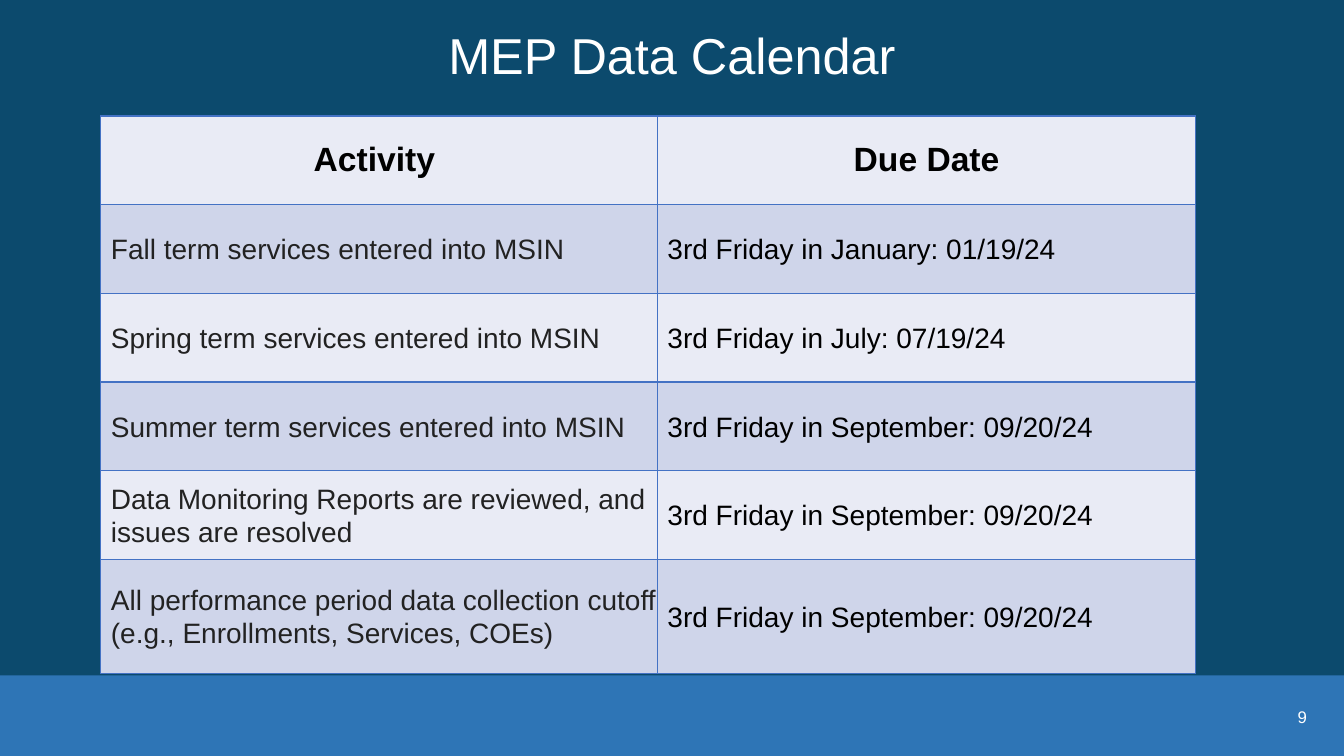
from lxml.etree import SubElement
from pptx import Presentation
from pptx.dml.color import RGBColor
from pptx.enum.shapes import MSO_SHAPE
from pptx.enum.text import MSO_ANCHOR, MSO_AUTO_SIZE, PP_ALIGN
from pptx.oxml.ns import qn
from pptx.util import Inches, Pt

NAVY = RGBColor(0x0C, 0x4A, 0x6D)
BLUE = RGBColor(0x2E, 0x75, 0xB6)
GRID = RGBColor(0x44, 0x72, 0xC4)
BANDS = RGBColor(0xE9, 0xEB, 0xF5), RGBColor(0xCF, 0xD5, 0xEA)
WHITE = RGBColor(0xFF, 0xFF, 0xFF)
BLACK = RGBColor(0, 0, 0)
CHARCOAL = RGBColor(0x22, 0x22, 0x22)

CALENDAR = [
    ("Activity ", "Due Date"),
    ("Fall term services entered into MSIN", "3rd Friday in January: 01/19/24"),
    ("Spring term services entered into MSIN", "3rd Friday in July: 07/19/24"),
    ("Summer term services entered into MSIN", "3rd Friday in September: 09/20/24"),
    ("Data Monitoring Reports are reviewed, and issues are resolved",
     "3rd Friday in September: 09/20/24"),
    ("All performance period data collection cutoff\n(e.g., Enrollments, Services, COEs)",
     "3rd Friday in September: 09/20/24"),
]
COLUMNS = 5.52, 5.34
ROWS = [0.88] * 5 + [1.13]


def write(tf, text, size, color, align, spacing=1.0, bold=False):
    tf.text = text
    for p in tf.paragraphs:
        p.alignment = align
        p.line_spacing = spacing
        font = {"name": "Arial", "size": Pt(size), "bold": bold}
        for r in p.runs:
            for key, value in font.items():
                setattr(r.font, key, value)
            r.font.color.rgb = color


def outline(cell):
    tc_pr = cell._tc.get_or_add_tcPr()
    for side in ("lnL", "lnR", "lnT", "lnB"):
        ln = SubElement(tc_pr, qn(f"a:{side}"), w=str(Pt(1)))
        fill = SubElement(ln, qn("a:solidFill"))
        SubElement(fill, qn("a:srgbClr"), val=str(GRID))


prs = Presentation()
prs.slide_width, prs.slide_height = Inches(13.33), Inches(7.5)
s = prs.slides.add_slide(prs.slide_layouts[5])
s.background.fill.solid()
s.background.fill.fore_color.rgb = NAVY

footer = s.shapes.add_shape(MSO_SHAPE.RECTANGLE, 0, Inches(6.7), prs.slide_width, Inches(0.8))
footer.shadow.inherit = False
footer.fill.solid()
footer.fill.fore_color.rgb = BLUE
footer.line.fill.background()

number = s.shapes.add_textbox(Inches(12.59), Inches(6.97), Inches(0.47), Inches(0.29))
number.text_frame.word_wrap = True
number.text_frame.vertical_anchor = MSO_ANCHOR.MIDDLE
write(number.text_frame, "9", 12, WHITE, PP_ALIGN.RIGHT)

title = s.shapes.title
title.left, title.top, title.width, title.height = 0, 0, prs.slide_width, Inches(1.15)
title.text_frame.auto_size = MSO_AUTO_SIZE.NONE
title.text_frame.vertical_anchor = MSO_ANCHOR.MIDDLE
write(title.text_frame, "MEP Data Calendar", 36, WHITE, PP_ALIGN.CENTER, 0.9)

table = s.shapes.add_table(len(ROWS), len(COLUMNS), Inches(1), Inches(1.15),
                           Inches(sum(COLUMNS)), Inches(sum(ROWS))).table
for column, width in zip(table.columns, COLUMNS):
    column.width = Inches(width)
for i, (row, height, texts) in enumerate(zip(table.rows, ROWS, CALENDAR)):
    row.height = Inches(height)
    for cell, text, color in zip(row.cells, texts, (CHARCOAL, BLACK)):
        outline(cell)
        cell.fill.solid()
        cell.fill.fore_color.rgb = BANDS[i % 2]
        cell.vertical_anchor = MSO_ANCHOR.MIDDLE
        if i == 0:
            write(cell.text_frame, text, 24, BLACK, PP_ALIGN.CENTER, bold=True)
        else:
            cell.margin_left = Inches(0.1)
            cell.margin_right = cell.margin_top = cell.margin_bottom = 0
            write(cell.text_frame, text, 20, color, PP_ALIGN.LEFT, 1.07)

prs.save("out.pptx")
